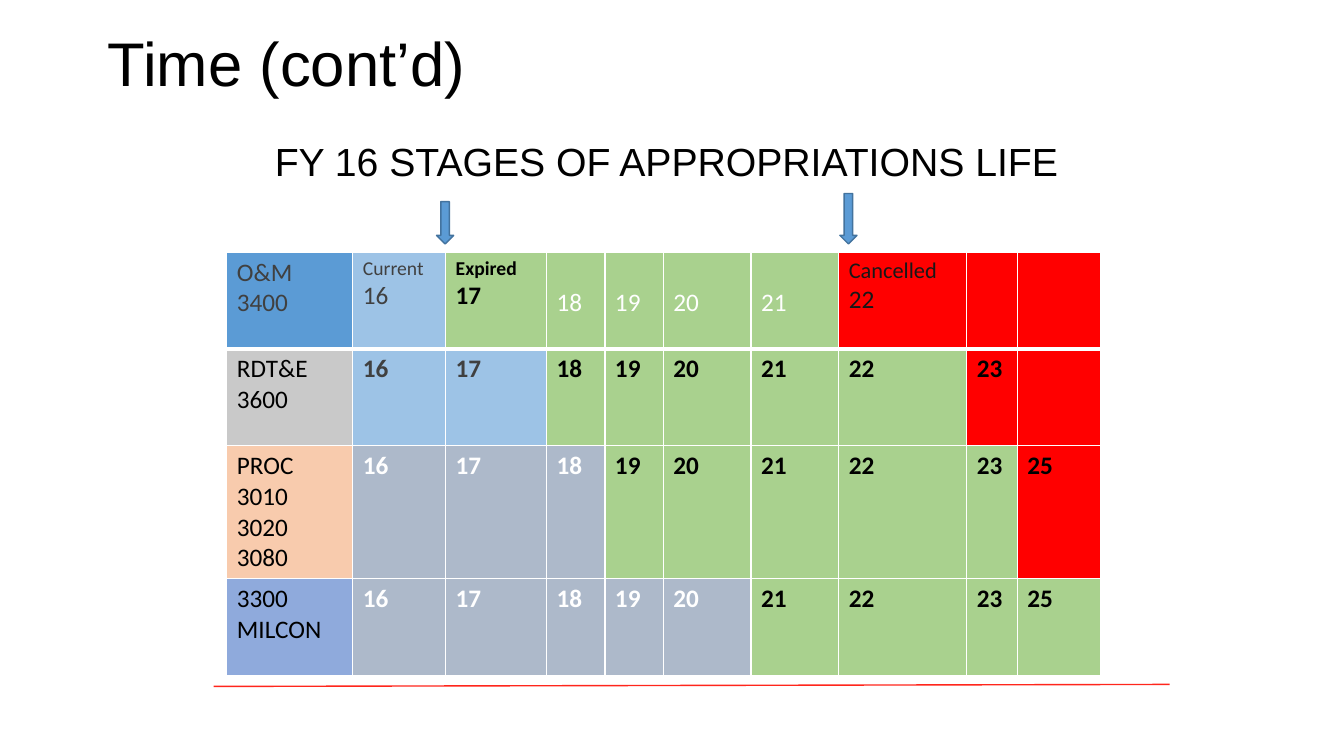
from dataclasses import dataclass

import pptx
import pptx.dml.color
import pptx.enum.shapes
import pptx.enum.text
import pptx.oxml
import pptx.oxml.ns
import pptx.util

PX = 9144
EXPIRED_YEARS = 5
YEARS = ("16", "17", "18", "19", "20", "21", "22", "23", "25")
COLUMN_WIDTHS = (125, 92, 100, 58, 58, 87, 87, 127, 50, 83)
COLORS = {
    "black": "000000", "white": "FFFFFF", "grey": "404040", "ink": "181717",
    "blue": "5B9BD5", "outline": "43739E", "sky": "9DC3E6", "steel": "ADB9CA",
    "green": "A9D18E", "red": "FF0000", "rule": "FF261C",
    "silver": "C9C9C9", "peach": "F8CBAD", "periwinkle": "8FAADC",
}


@dataclass(frozen=True)
class Fund:
    label: str
    label_fill: str
    label_color: str
    current_years: int
    current_fill: str
    current_color: str
    shown_years: int
    height: int = 96


@dataclass(frozen=True)
class StageArrow:
    left: int
    top: int
    height: int


@dataclass(frozen=True)
class Entry:
    text: str
    fill: str
    color: str
    bold: bool = True
    lead_size: int = 18
    margin_top: int = 5


FUNDS = (
    Fund("O&M\n3400", "blue", "grey", 1, "sky", "grey", 7),
    Fund("RDT&E\n3600", "silver", "black", 2, "sky", "grey", 8),
    Fund("PROC\n3010 3020\n3080", "peach", "black", 3, "steel", "white", 9, 132),
    Fund("3300\nMILCON", "periwinkle", "black", 5, "steel", "white", 9),
)
STAGE_ENTRIES = {
    0: Entry("Current\n16", "sky", "grey", False, 14),
    1: Entry("Expired\n17", "green", "black", True, 14),
    6: Entry("Cancelled\n22", "red", "ink", False, 16),
}
STAGE_ARROWS = (StageArrow(433, 200, 42), StageArrow(833, 192, 50))


def px(length: int) -> pptx.util.Emu:
    return pptx.util.Emu(length * PX)


def rgb(name: str) -> pptx.dml.color.RGBColor:
    return pptx.dml.color.RGBColor.from_string(COLORS[name])


def write_text(frame, text: str, *, font: str, size: int, color: str = "black",
               bold: bool = False, lead_size: int = 0, align: str = "LEFT",
               line_spacing: float = 1.0) -> None:
    frame.word_wrap = True
    for index, line in enumerate(text.split("\n")):
        paragraph = frame.add_paragraph() if index else frame.paragraphs[0]
        paragraph.alignment = pptx.enum.text.PP_ALIGN[align]
        paragraph.line_spacing = line_spacing
        run = paragraph.add_run()
        run.text = line
        run.font.name = font
        run.font.size = pptx.util.Pt(size if index else lead_size or size)
        run.font.bold = bold
        run.font.color.rgb = rgb(color)


def set_borders(cell, bottom_width: int) -> None:
    properties = cell._tc.get_or_add_tcPr()
    for side in ("L", "R", "T", "B"):
        width = pptx.util.Pt(bottom_width if side == "B" else 1)
        properties.append(pptx.oxml.parse_xml(
            f'<a:ln{side} {pptx.oxml.ns.nsdecls("a")} w="{width}"><a:solidFill>'
            f'<a:srgbClr val="{COLORS["white"]}"/></a:solidFill></a:ln{side}>'))


def year_entry(fund: Fund, index: int) -> Entry:
    first = fund is FUNDS[0]
    if first and index in STAGE_ENTRIES:
        return STAGE_ENTRIES[index]
    year = YEARS[index] if index < fund.shown_years else ""
    if index < fund.current_years:
        return Entry(year, fund.current_fill, fund.current_color)
    if index >= fund.current_years + EXPIRED_YEARS:
        return Entry(year, "red", "black")
    if first:
        return Entry(year, "green", "white", bold=False, margin_top=35)
    return Entry(year, "green", "black")


def draw_life_table(slide) -> None:
    heights = [fund.height for fund in FUNDS]
    life = slide.shapes.add_table(
        len(FUNDS), len(COLUMN_WIDTHS), px(225), px(250),
        px(sum(COLUMN_WIDTHS)), px(sum(heights))).table
    life.first_row = False
    life.horz_banding = False
    for column, width in zip(life.columns, COLUMN_WIDTHS):
        column.width = px(width)
    for row_index, fund in enumerate(FUNDS):
        life.rows[row_index].height = px(fund.height)
        entries = [Entry(fund.label, fund.label_fill, fund.label_color, False)]
        entries += [year_entry(fund, index) for index in range(len(YEARS))]
        for column_index, entry in enumerate(entries):
            cell = life.cell(row_index, column_index)
            set_borders(cell, 1 if row_index else 3)
            cell.fill.solid()
            cell.fill.fore_color.rgb = rgb(entry.fill)
            cell.margin_top = px(entry.margin_top)
            if entry.text:
                write_text(cell.text_frame, entry.text, font="Calibri", size=18,
                           color=entry.color, bold=entry.bold,
                           lead_size=entry.lead_size)


def draw_stage_arrow(slide, arrow: StageArrow) -> None:
    pointer = slide.shapes.add_shape(
        pptx.enum.shapes.MSO_SHAPE.DOWN_ARROW,
        px(arrow.left), px(arrow.top), px(17), px(arrow.height))
    pointer.shadow.inherit = False
    pointer.fill.solid()
    pointer.fill.fore_color.rgb = rgb("blue")
    pointer.line.color.rgb = rgb("outline")
    pointer.line.width = pptx.util.Pt(1)


def draw_footer_rule(slide) -> None:
    rule = slide.shapes.add_connector(
        pptx.enum.shapes.MSO_CONNECTOR.STRAIGHT,
        px(212), px(681), px(1160), px(679))
    rule.line.color.rgb = rgb("rule")
    rule.line.width = pptx.util.Pt(1)
    rule._element.spPr.append(pptx.oxml.parse_xml(
        f'<a:effectLst {pptx.oxml.ns.nsdecls("a")}/>'))


def draw_headings(slide) -> None:
    title = slide.shapes.title
    title.left, title.top, title.width, title.height = map(px, (97, 25, 1011, 83))
    title.text_frame.auto_size = pptx.enum.text.MSO_AUTO_SIZE.NONE
    title.text_frame.vertical_anchor = pptx.enum.text.MSO_ANCHOR.MIDDLE
    write_text(title.text_frame, "Time (cont’d)", font="Arial", size=44,
               line_spacing=0.9)
    subtitle = slide.shapes.add_textbox(px(211), px(137), px(900), px(50))
    write_text(subtitle.text_frame, "FY 16 STAGES OF APPROPRIATIONS LIFE",
               font="Arial", size=28, align="CENTER", line_spacing=0.9)


def main() -> None:
    deck = pptx.Presentation()
    deck.slide_width, deck.slide_height = px(1333), px(750)
    slide = deck.slides.add_slide(deck.slide_layouts[5])
    draw_footer_rule(slide)
    draw_headings(slide)
    draw_life_table(slide)
    for arrow in STAGE_ARROWS:
        draw_stage_arrow(slide, arrow)
    deck.save("out.pptx")


if __name__ == "__main__":
    main()
